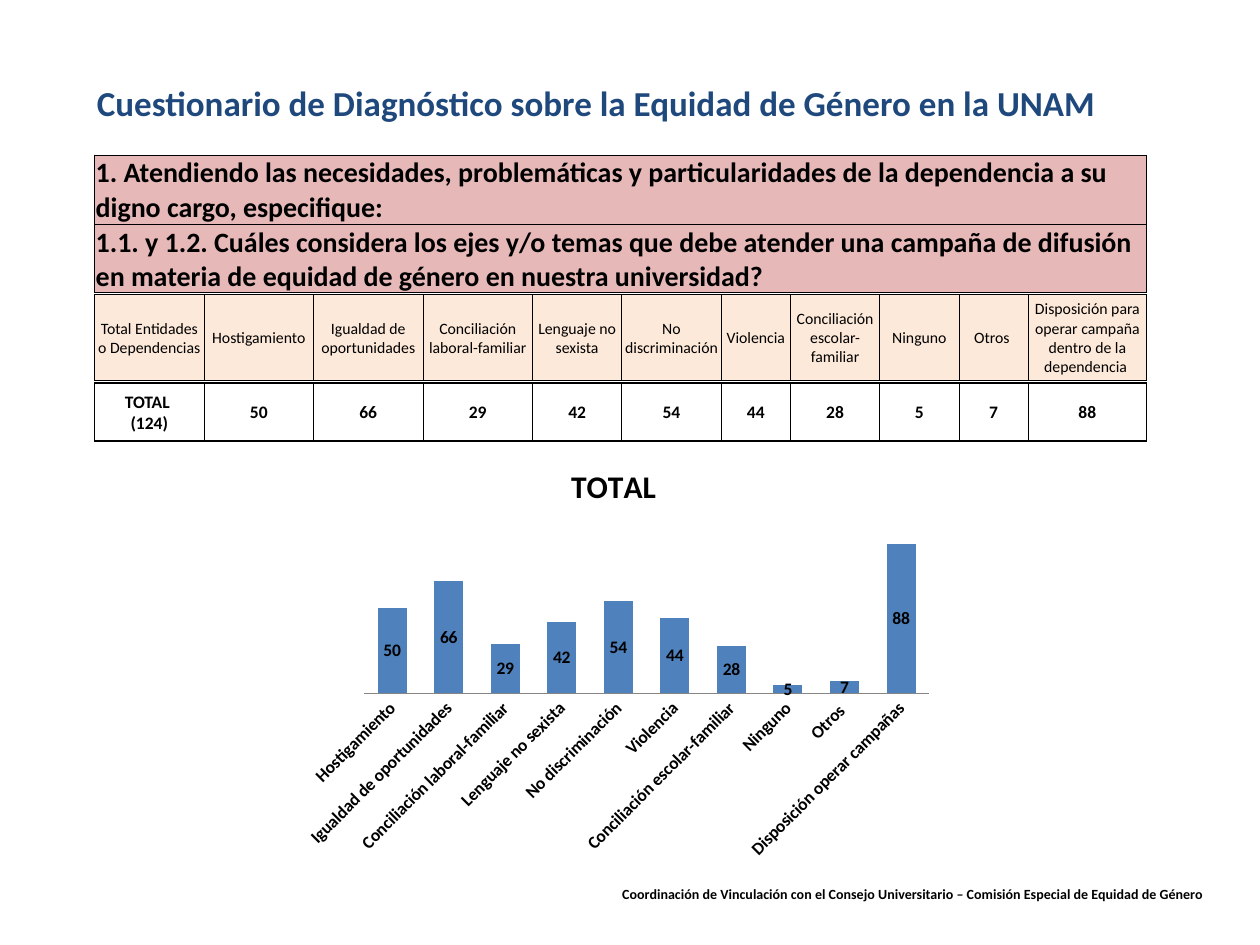
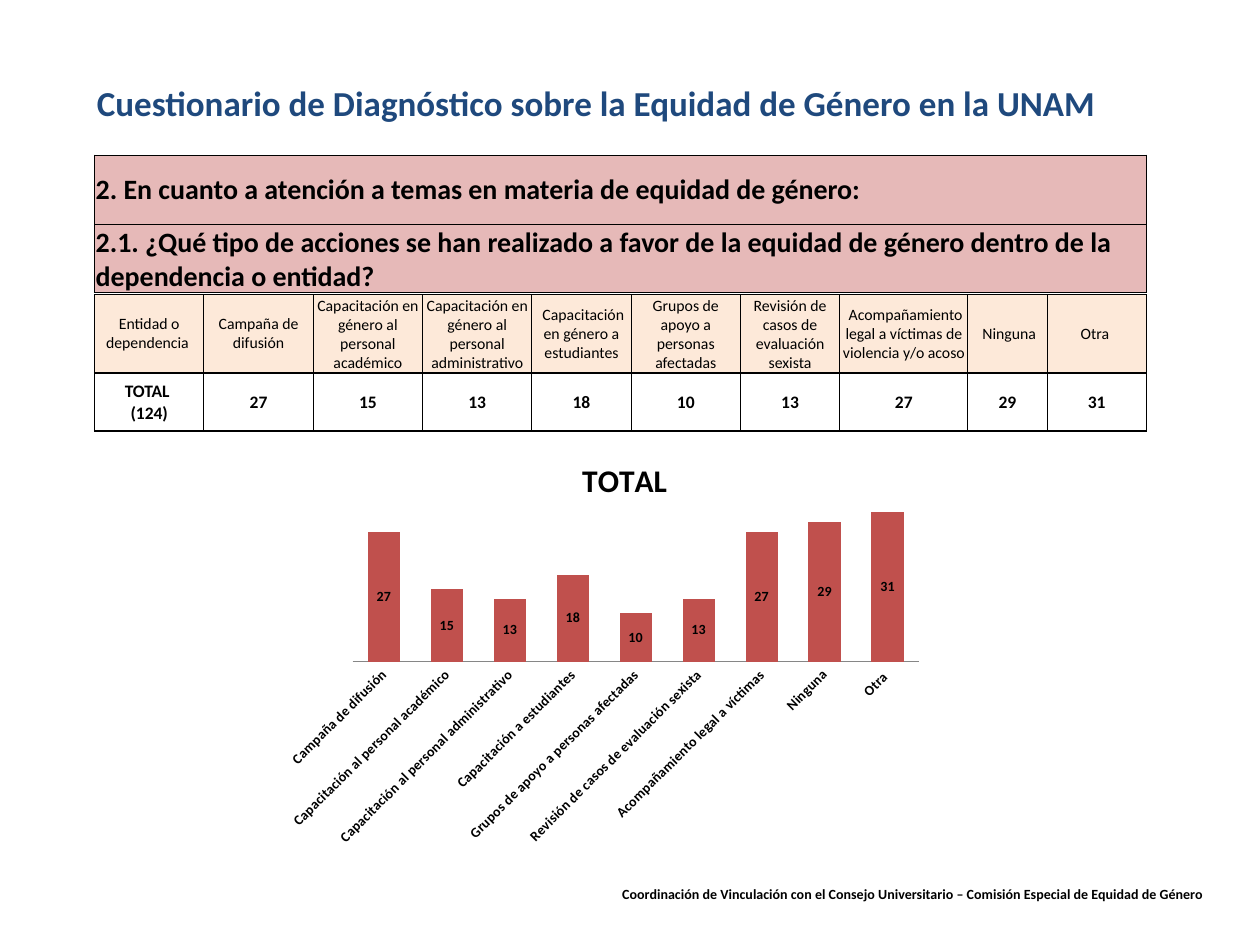
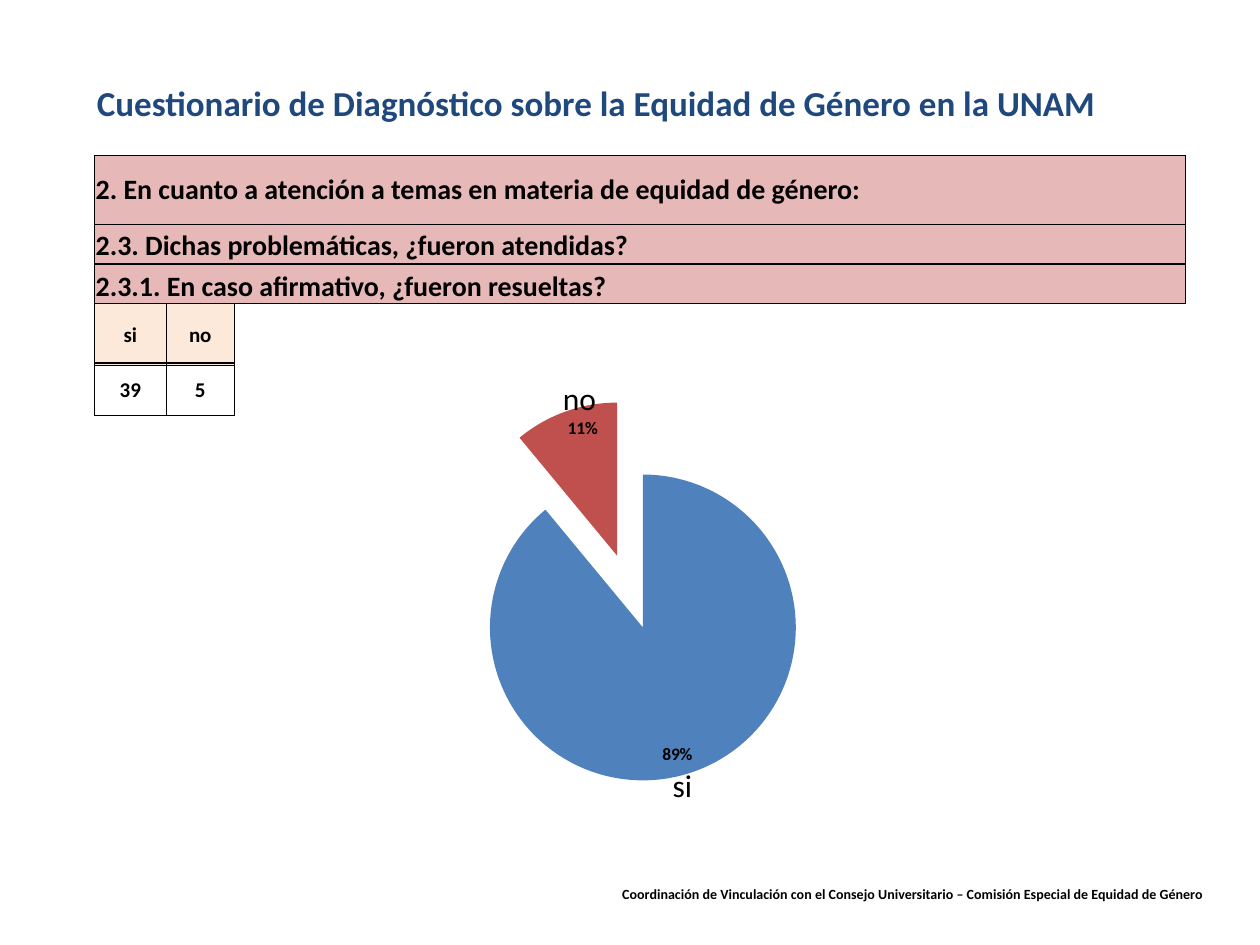
from lxml import etree
from pptx import Presentation
from pptx.chart.data import CategoryChartData
from pptx.dml.color import RGBColor
from pptx.enum.chart import XL_CHART_TYPE, XL_LABEL_POSITION, XL_TICK_MARK
from pptx.enum.text import MSO_ANCHOR, PP_ALIGN
from pptx.oxml import parse_xml
from pptx.oxml.ns import nsdecls, qn
from pptx.util import Inches, Pt

COLUMN_STACKED, PIE = XL_CHART_TYPE.COLUMN_STACKED, XL_CHART_TYPE.PIE
INSIDE_END = XL_LABEL_POSITION.INSIDE_END
NO_TICKS = XL_TICK_MARK.NONE
MIDDLE, BOTTOM = MSO_ANCHOR.MIDDLE, MSO_ANCHOR.BOTTOM
LEFT, CENTER = PP_ALIGN.LEFT, PP_ALIGN.CENTER

FONT = "Calibri"
BLACK = RGBColor(0x00, 0x00, 0x00)
NAVY = RGBColor(0x1F, 0x49, 0x7D)
PINK = RGBColor(0xE6, 0xB9, 0xB8)
CREAM = RGBColor(0xFD, 0xE9, 0xD9)
BLUE = RGBColor(0x4F, 0x81, 0xBD)
RED = RGBColor(0xC0, 0x50, 0x4D)
AXIS_GRAY = RGBColor(0x86, 0x86, 0x86)

TABLE_LEFT = 0.75
BAND_TOP = 1.23
BAND_WIDTH = 8.35
THIN, THICK = 0.5, 1

TITLE = "Cuestionario de Diagnóstico sobre la Equidad de Género en la UNAM"
FOOTER = ("Coordinación de Vinculación con el Consejo Universitario – "
          "Comisión Especial de Equidad de Género")
ATTENTION = "2. En cuanto a atención a temas en materia de equidad de género:"

CAMPAIGN_HEADINGS = [
    "Total Entidades o Dependencias", "Hostigamiento", "Igualdad de oportunidades",
    "Conciliación laboral-familiar", "Lenguaje no sexista", "No discriminación",
    "Violencia", "Conciliación escolar-familiar", "Ninguno", "Otros ",
    "Disposición para operar campaña dentro de la dependencia "]
CAMPAIGN_WIDTHS = [0.87] * 4 + [0.71, 0.79, 0.55, 0.71, 0.63, 0.55, 0.94]
CAMPAIGN_TOTALS = [50, 66, 29, 42, 54, 44, 28, 5, 7, 88]
CAMPAIGN_TOPICS = CAMPAIGN_HEADINGS[1:-1] + ["Disposición operar campañas"]

ACTION_HEADINGS = [
    "Entidad o dependencia ", "Campaña de difusión",
    "Capacitación en género al personal académico",
    "Capacitación en género al personal administrativo",
    " Capacitación en género a estudiantes", "Grupos de apoyo a personas afectadas",
    "Revisión de casos de evaluación sexista",
    " Acompañamiento legal a víctimas de violencia y/o acoso", " Ninguna", "Otra "]
ACTION_WIDTHS = [0.87] * 4 + [0.79, 0.87, 0.79, 1.02, 0.63, 0.79]
ACTION_TOTALS = [27, 15, 13, 18, 10, 13, 27, 29, 31]
ACTIONS = [
    "Campaña de difusión", "Capacitación al personal académico",
    "Capacitación al personal administrativo", " Capacitación a estudiantes",
    "Grupos de apoyo a personas afectadas", "Revisión de casos de evaluación sexista",
    " Acompañamiento legal a víctimas", " Ninguna", "Otra "]


def style_font(font, size, color=BLACK, bold=True):
    font.name = FONT
    font.size = Pt(size)
    font.bold = bold
    font.color.rgb = color


def style_text(frame, size, color=BLACK, bold=True, align=LEFT):
    for paragraph in frame.paragraphs:
        paragraph.alignment = align
        for run in paragraph.runs:
            style_font(run.font, size, color, bold)


def add_text(slide, text, box, size, color=BLACK, bold=True, wrap=True):
    frame = slide.shapes.add_textbox(*map(Inches, box)).text_frame
    frame.word_wrap = wrap
    frame.text = text
    style_text(frame, size, color, bold)


def set_borders(cell, widths):
    """Draw black borders; widths run left, right, top, bottom in points."""
    properties = cell._tc.get_or_add_tcPr()
    for index, (side, width) in enumerate(zip("LRTB", widths)):
        properties.insert(index, parse_xml(
            f'<a:ln{side} {nsdecls("a")} w="{Pt(width)}"><a:solidFill>'
            f'<a:srgbClr val="{BLACK}"/></a:solidFill></a:ln{side}>'))


def add_row(slide, texts, top, widths, height, size, fill=None, bold=True,
            align=CENTER, anchor=MIDDLE, rule=THIN, edge=THIN):
    """Add a one-row table; rule is its top and bottom line, edge its outer sides."""
    table = slide.shapes.add_table(
        1, len(texts), Inches(TABLE_LEFT), Inches(top),
        Inches(sum(widths)), Inches(height)).table
    table.first_row = table.horz_banding = False
    last = len(texts) - 1
    for index, (text, width) in enumerate(zip(texts, widths)):
        table.columns[index].width = Inches(width)
        cell = table.cell(0, index)
        cell.text_frame.text = str(text)
        style_text(cell.text_frame, size, bold=bold, align=align)
        cell.vertical_anchor = anchor
        cell.margin_left = cell.margin_right = cell.margin_top = Inches(0.01)
        cell.margin_bottom = 0
        if fill is None:
            cell.fill.background()
        else:
            cell.fill.solid()
            cell.fill.fore_color.rgb = fill
        set_borders(cell, [edge if index == 0 else THIN,
                           edge if index == last else THIN, rule, rule])


def add_band(slide, text, top, height, width=BAND_WIDTH, anchor=BOTTOM):
    add_row(slide, [text], top, [width], height, 16, PINK, align=LEFT, anchor=anchor)


def add_question_slide(prs, heading, band_width=BAND_WIDTH):
    """Add a slide with the shared title, first question band and footer."""
    slide = prs.slides.add_slide(prs.slide_layouts[6])
    add_text(slide, TITLE, (0.67, 0.6, 8.58, 0.44), 20, NAVY)
    add_band(slide, heading, BAND_TOP, 0.55, band_width, MIDDLE)
    add_text(slide, FOOTER, (4.84, 6.98, 4.83, 0.24), 8, wrap=False)
    return slide


def add_results(slide, headings, totals, widths, height):
    """Add the heading row and the row of totals, as wide as the bands."""
    top = 2.34
    scale = BAND_WIDTH / sum(widths)
    widths = [width * scale for width in widths]
    add_row(slide, headings, top, widths, height, 9, CREAM, bold=False)
    add_row(slide, ["TOTAL \n(124)"] + totals, top + height + 0.02, widths, 0.46, 10,
            rule=THICK, edge=THICK)


def set_layout(parent, index, **places):
    """Place a chart part by fractions of the chart's size."""
    for old in parent.findall(qn("c:layout")):
        parent.remove(old)
    layout = parse_xml(f'<c:layout {nsdecls("c")}><c:manualLayout/></c:layout>')
    if "w" in places:
        etree.SubElement(layout[0], qn("c:layoutTarget")).set("val", "inner")
    for key in ("x", "y"):
        etree.SubElement(layout[0], qn(f"c:{key}Mode")).set("val", "edge")
    for key, value in places.items():
        etree.SubElement(layout[0], qn(f"c:{key}")).set("val", str(value))
    parent.insert(index, layout)


def add_chart(slide, kind, name, categories, values, box, size):
    data = CategoryChartData()
    data.categories = categories
    data.add_series(name, values)
    chart = slide.shapes.add_chart(kind, *map(Inches, box), data).chart
    chart.has_title = False
    chart.has_legend = False
    style_font(chart.font, size)
    plot = chart.plots[0]
    plot.has_data_labels = True
    style_font(plot.data_labels.font, size)
    return chart, plot


def add_totals_chart(slide, categories, values, box, size, color, maximum,
                     title_place, plot_place):
    chart, plot = add_chart(slide, COLUMN_STACKED, "TOTAL", categories, values, box, size)
    chart.has_title = True
    title = chart.chart_title
    title.text_frame.text = "TOTAL"
    style_text(title.text_frame, 18, align=CENTER)
    set_layout(title._element, 1, **title_place)
    set_layout(chart._chartSpace.chart.plotArea, 0, **plot_place)

    plot.gap_width, plot.overlap = 95, 100
    plot.vary_by_categories = False
    plot.data_labels.show_value = True
    bars = plot.series[0].format.fill
    bars.solid()
    bars.fore_color.rgb = color

    value_axis = chart.value_axis
    value_axis.minimum_scale, value_axis.maximum_scale = 0, maximum
    value_axis.has_major_gridlines = False
    value_axis.visible = False
    topic_axis = chart.category_axis
    topic_axis.major_tick_mark = NO_TICKS
    topic_axis.format.line.color.rgb = AXIS_GRAY
    style_font(topic_axis.tick_labels.font, size)
    label_body = topic_axis._element.find(qn("c:txPr")).find(qn("a:bodyPr"))
    label_body.set("rot", str(-45 * 60000))
    label_body.set("vert", "horz")


def add_resolved_pie(slide):
    _, plot = add_chart(slide, PIE, "Series 1", ["1", "2"], [89, 11],
                        (2.48, 3.04, 5.04, 3.31), 10)
    plot.vary_by_categories = True
    labels = plot.data_labels
    labels.show_value = False
    labels.show_percentage = True
    labels.number_format, labels.number_format_is_linked = "0%", False
    labels.position = INSIDE_END
    series = plot.series[0]
    for index, color in enumerate((BLUE, RED)):
        slice_fill = series.points[index].format.fill
        slice_fill.solid()
        slice_fill.fore_color.rgb = color
    series._element.get_or_add_spPr().addnext(
        parse_xml(f'<c:explosion {nsdecls("c")} val="25"/>'))


def build_campaign_slide(prs):
    slide = add_question_slide(
        prs, "1. Atendiendo las necesidades, problemáticas y particularidades de la "
        "dependencia a su digno cargo, especifique:")
    add_band(slide, "1.1. y 1.2. Cuáles considera los ejes y/o temas que debe atender una "
             "campaña de difusión en materia de equidad de género en nuestra universidad?",
             1.78, 0.54)
    add_results(slide, CAMPAIGN_HEADINGS, CAMPAIGN_TOTALS, CAMPAIGN_WIDTHS, 0.68)
    add_totals_chart(slide, CAMPAIGN_TOPICS, CAMPAIGN_TOTALS, (2.32, 3.51, 5.16, 3.38),
                     10, BLUE, 100, dict(x=0.42, y=0.04),
                     dict(x=0.11, y=0.19, w=0.87, h=0.4))


def build_actions_slide(prs):
    slide = add_question_slide(prs, ATTENTION)
    add_band(slide, "2.1. ¿Qué tipo de acciones se han realizado a favor de la equidad de "
             "género dentro de la dependencia o entidad?", 1.78, 0.54)
    add_results(slide, ACTION_HEADINGS, ACTION_TOTALS, ACTION_WIDTHS, 0.6)
    add_totals_chart(slide, ACTIONS, ACTION_TOTALS, (2.17, 3.28, 5.23, 3.52),
                     8, RED, 35, dict(x=0.46, y=0.09),
                     dict(x=0.12, y=0.18, w=0.86, h=0.38))


def build_resolved_slide(prs):
    width = 8.66
    slide = add_question_slide(prs, ATTENTION, width)
    add_band(slide, "2.3. Dichas problemáticas, ¿fueron atendidas?", 1.78, 0.31, width)
    add_band(slide, "2.3.1. En caso afirmativo, ¿fueron resueltas?", 2.1, 0.31, width)
    answer_widths = [0.57, 0.54]
    add_row(slide, ["si", "no"], 2.41, answer_widths, 0.49, 12, CREAM)
    add_row(slide, [39, 5], 2.88, answer_widths, 0.42, 12, rule=THICK)
    add_resolved_pie(slide)
    for answer, left, top in (("si", 5.24, 6.03), ("no", 4.37, 2.96)):
        add_text(slide, answer, (left, top, 0.47, 0.4), 18, bold=False)


def main():
    prs = Presentation()
    prs.slide_width, prs.slide_height = Inches(10), Inches(7.5)
    build_campaign_slide(prs)
    build_actions_slide(prs)
    build_resolved_slide(prs)
    prs.save("out.pptx")


if __name__ == "__main__":
    main()
